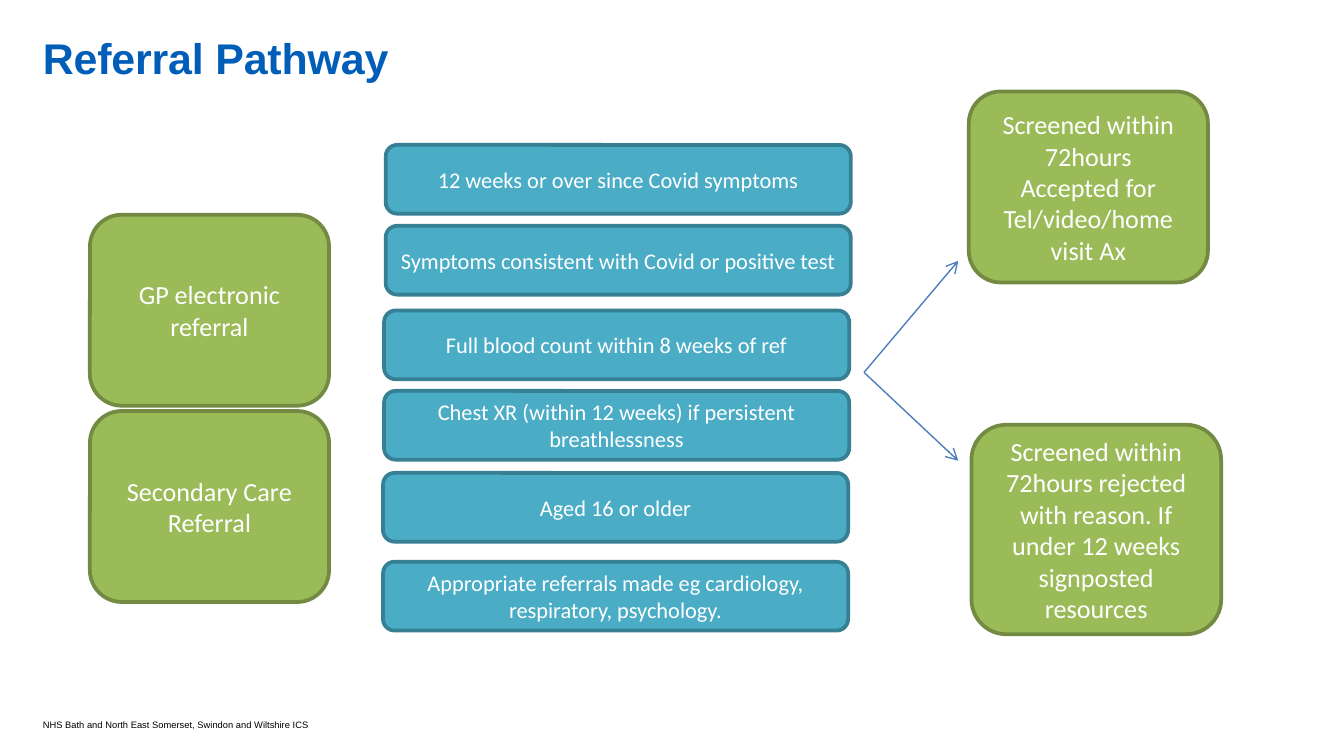
from lxml import etree
from pptx import Presentation
from pptx.dml.color import RGBColor
from pptx.enum import shapes, text
from pptx.oxml import ns
from pptx.util import Cm, Pt

BLUE = RGBColor(0x00, 0x5E, 0xB8)
BLACK = RGBColor(0, 0, 0)
WHITE = RGBColor(0xFF, 0xFF, 0xFF)
GREEN = RGBColor(0x9B, 0xBB, 0x59)
DARK_GREEN = RGBColor(0x73, 0x8A, 0x42)
TEAL = RGBColor(0x4B, 0xAC, 0xC6)
DARK_TEAL = RGBColor(0x37, 0x7F, 0x92)
ARROW_BLUE = RGBColor(0x4B, 0x7E, 0xBC)

SOURCES = ["GP electronic referral", "Secondary Care Referral"]
CRITERIA = [
    (0.05, 0, "12 weeks or over since Covid symptoms"),
    (0.05, 1.53, "Symptoms consistent with Covid or positive test"),
    (0.02, 3.13, "Full blood count within 8 weeks of ref"),
    (0.02, 4.65, "Chest XR (within 12 weeks) if persistent breathlessness"),
    (0, 6.2, "Aged 16 or older"),
    (0, 7.88, "Appropriate referrals made eg cardiology, respiratory, psychology."),
]
ACCEPTED = ["Screened within 72hours", "Accepted for Tel/video/home visit Ax"]
REJECTED = ["Screened within 72hours rejected with reason. "
            "If under 12 weeks signposted resources"]


def add_run(paragraph, wording, size, font, color, bold=False):
    """Add one formatted run to a paragraph and return it."""
    run = paragraph.add_run()
    run.text = wording
    run.font.size = Pt(size)
    run.font.name = font
    run.font.bold = bold
    run.font.color.rgb = color
    return run


def add_plain_line(slide, box, wording, size, color, bold=False):
    """Place one line of Arial text without margins; return paragraph and run."""
    frame = slide.shapes.add_textbox(*map(Cm, box)).text_frame
    frame.word_wrap = True
    frame.margin_left = frame.margin_right = 0
    frame.margin_top = frame.margin_bottom = 0
    paragraph = frame.paragraphs[0]
    return paragraph, add_run(paragraph, wording, size, "Arial", color, bold)


def add_heading(slide, box):
    """Place the slide heading."""
    paragraph, run = add_plain_line(slide, box, "Referral Pathway", 23, BLUE, True)
    paragraph.line_spacing = Pt(24.5)
    run._r.get_or_add_rPr().set("spc", "-10")


def add_footer(slide, box):
    """Place the organisation line at the foot of the slide."""
    add_plain_line(slide, box,
                   "NHS Bath and North East Somerset, Swindon and Wiltshire ICS",
                   5, BLACK)


def add_card(slide, box, paragraphs, size, fill, outline):
    """Place a rounded card with centred white text."""
    card = slide.shapes.add_shape(shapes.MSO_SHAPE.ROUNDED_RECTANGLE, *map(Cm, box))
    card.shadow.inherit = False
    card.fill.solid()
    card.fill.fore_color.rgb = fill
    card.line.color.rgb = outline
    card.line.width = Pt(2)
    frame = card.text_frame
    frame.word_wrap = True
    frame.vertical_anchor = text.MSO_ANCHOR.MIDDLE
    frame.margin_left = frame.margin_right = Cm(0.18)
    frame.margin_top = frame.margin_bottom = Cm(0.09)
    for index, wording in enumerate(paragraphs):
        paragraph = frame.add_paragraph() if index else frame.paragraphs[0]
        paragraph.alignment = text.PP_ALIGN.CENTER
        add_run(paragraph, wording, size, "Calibri", WHITE)


def add_sources(slide, box):
    """Stack the referral sources in the box with a narrow gap."""
    left, top, width, height = box
    gap = 0.1
    card_height = (height - gap * (len(SOURCES) - 1)) / len(SOURCES)
    for index, source in enumerate(SOURCES):
        card_top = top + index * (card_height + gap)
        add_card(slide, (left, card_top, width, card_height), [source],
                 14, GREEN, DARK_GREEN)


def add_criteria(slide, box):
    """Place the referral criteria down the box."""
    left, top, width, height = box
    card_height = height - CRITERIA[-1][1]
    for shift, drop, criterion in CRITERIA:
        add_card(slide, (left + shift, top + drop, width, card_height), [criterion],
                 12, TEAL, DARK_TEAL)


def add_outcomes(slide, box):
    """Place the accepted card at the top of the box and the rejected one at its foot."""
    left, top, width, height = box
    add_card(slide, (left, top, 4.52, 3.61), ACCEPTED, 14, GREEN, DARK_GREEN)
    add_card(slide, (left + width - 4.72, top + height - 3.96, 4.72, 3.96),
             REJECTED, 14, GREEN, DARK_GREEN)


def add_fork(slide, box, split):
    """Draw two arrows from the split height to the right corners of the box."""
    left, top, width, height = box
    for end in (top + height, top):
        arrow = slide.shapes.add_connector(
            shapes.MSO_CONNECTOR.STRAIGHT,
            Cm(left), Cm(top + split), Cm(left + width), Cm(end))
        arrow.line.color.rgb = ARROW_BLUE
        arrow.line.width = Pt(0.75)
        etree.SubElement(arrow.line._get_or_add_ln(), ns.qn("a:tailEnd"), type="arrow")
        etree.SubElement(arrow._element.spPr, ns.qn("a:effectLst"))


def main():
    """Build the referral pathway slide and save it."""
    deck = Presentation()
    deck.slide_width, deck.slide_height = Cm(25.4), Cm(14.29)
    slide = deck.slides.add_slide(deck.slide_layouts[6])
    add_footer(slide, (0.81, 13.59, 20.7, 0.2))
    add_heading(slide, (0.81, 0.71, 23.77, 0.86))
    add_sources(slide, (1.7, 4.06, 4.52, 7.32))
    add_criteria(slide, (7.24, 2.74, 8.79, 9.18))
    add_outcomes(slide, (18.31, 1.73, 4.77, 10.26))
    add_fork(slide, (16.33, 4.93, 1.78, 3.78), 2.11)
    deck.save("out.pptx")


if __name__ == "__main__":
    main()
